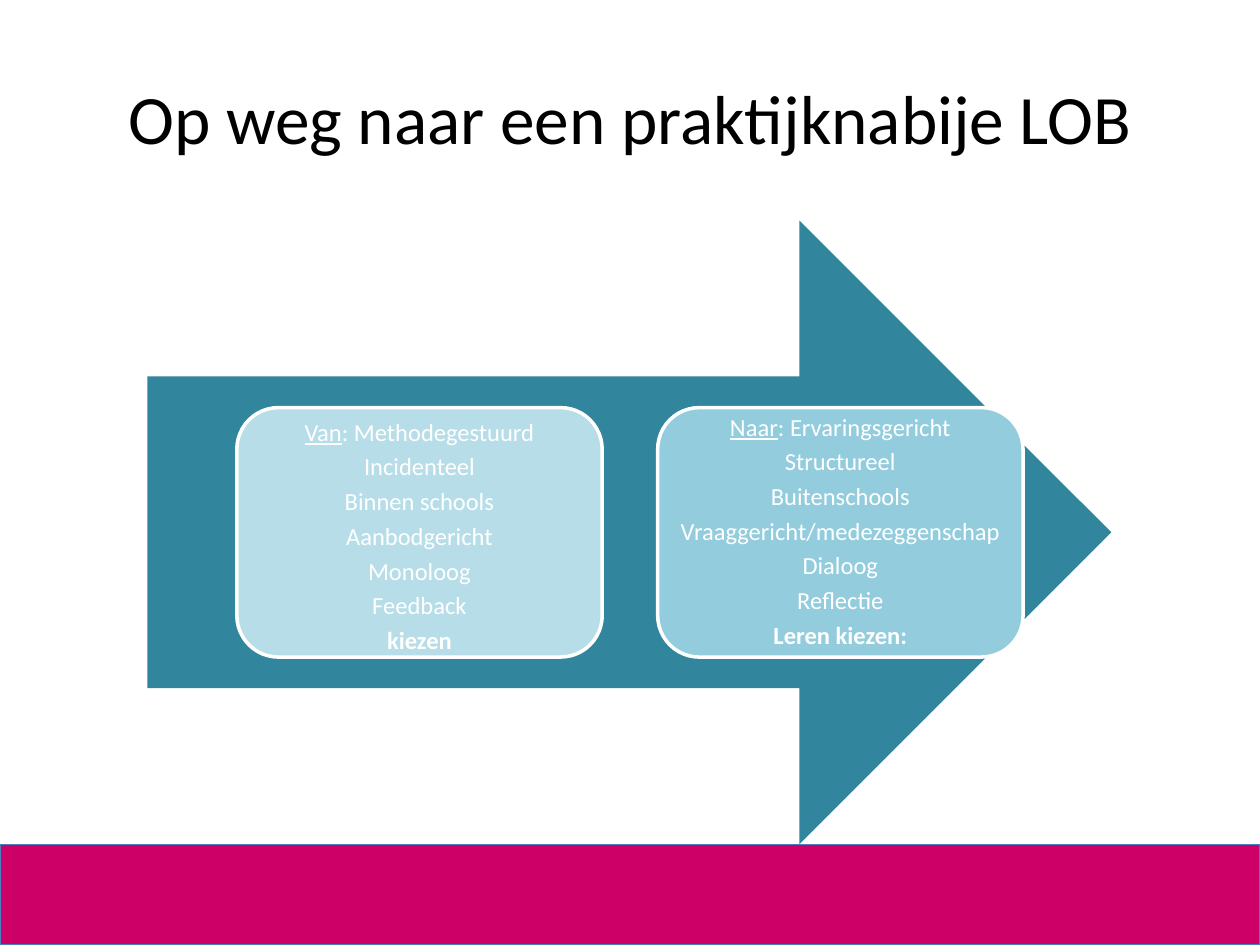
from pptx import Presentation
from pptx.dml.color import RGBColor
from pptx.enum.shapes import MSO_SHAPE as Shape
from pptx.enum.text import MSO_ANCHOR as Anchor, PP_ALIGN as Align
from pptx.util import Inches, Pt

# Content
TITLE = "Op weg naar een praktijknabije LOB"
CARDS = [
    {
        "label": "Van", "first": "Methodegestuurd", "fill": "from_card", "drop": 0.08,
        "middle": ["Incidenteel", "Binnen schools", "Aanbodgericht", "Monoloog", "Feedback"],
        "last": "kiezen",
    },
    {
        "label": "Naar", "first": "Ervaringsgericht", "fill": "to_card", "drop": 0,
        "middle": ["Structureel", "Buitenschools", "Vraaggericht/medezeggenschap",
                   "Dialoog", "Reflectie"],
        "last": "Leren kiezen:",
    },
]

THEME = {
    "font": "Calibri", "title_size": 39.6, "card_size": 14,
    "black": "000000", "white": "FFFFFF", "arrow": "31859C",
    "from_card": "B7DEE8", "to_card": "93CDDD",
    "band": "CC0066", "band_line": "4B7EBC",
}

# Layout in inches
SLIDE_WIDTH, SLIDE_HEIGHT = 10, 7.5
BAND_HEIGHT = 0.8
ARROW = (1.17, 1.75, 7.65, 4.95)
CARD_LEFT, CARD_WIDTH, CARD_HEIGHT, CARD_GAP = 1.88, 2.9, 1.98, 0.44
CARD_TOP = ARROW[1] + (ARROW[3] - CARD_HEIGHT) / 2
CARD_MARGIN = 0.06


def color(name):
    return RGBColor.from_string(THEME[name])


def add_block(slide, preset, box, fill, line=None, line_width=0):
    shape = slide.shapes.add_shape(preset, *map(Inches, box))
    shape.shadow.inherit = False
    shape.fill.solid()
    shape.fill.fore_color.rgb = color(fill)
    if line:
        shape.line.color.rgb = color(line)
        shape.line.width = Pt(line_width)
    else:
        shape.line.fill.background()
    return shape


def style_run(run, size, font_color):
    run.font.name = THEME["font"]
    run.font.size = Pt(THEME[size])
    run.font.color.rgb = color(font_color)


def add_title(slide):
    box = slide.shapes.add_textbox(*map(Inches, (0.5, 0.3, 9, 1.25)))
    frame = box.text_frame
    frame.word_wrap = True
    frame.vertical_anchor = Anchor.MIDDLE
    frame.text = TITLE
    paragraph = frame.paragraphs[0]
    paragraph.alignment = Align.CENTER
    style_run(paragraph.runs[0], "title_size", "black")


def add_card(slide, index, card):
    left = CARD_LEFT + index * (CARD_WIDTH + CARD_GAP)
    shape = add_block(slide, Shape.ROUNDED_RECTANGLE,
                      (left, CARD_TOP, CARD_WIDTH, CARD_HEIGHT), card["fill"], "white", 2)
    frame = shape.text_frame
    frame.word_wrap = True
    frame.vertical_anchor = Anchor.MIDDLE
    frame.margin_left = frame.margin_right = frame.margin_bottom = Inches(CARD_MARGIN)
    frame.margin_top = Inches(CARD_MARGIN + card["drop"])

    frame.text = "\n".join([card["label"], *card["middle"], card["last"]])
    paragraphs = frame.paragraphs
    paragraphs[0].add_run().text = ": " + card["first"]
    for paragraph in paragraphs:
        paragraph.alignment = Align.CENTER
        paragraph.line_spacing = 0.9
        paragraph.space_after = Pt(4.7)
        for run in paragraph.runs:
            style_run(run, "card_size", "white")
    paragraphs[0].runs[0].font.underline = True
    paragraphs[-1].runs[0].font.bold = True


def main():
    presentation = Presentation()
    presentation.slide_width = Inches(SLIDE_WIDTH)
    presentation.slide_height = Inches(SLIDE_HEIGHT)
    slide = presentation.slides.add_slide(presentation.slide_layouts[6])

    # Bottom band and title
    add_block(slide, Shape.RECTANGLE,
              (0, SLIDE_HEIGHT - BAND_HEIGHT, SLIDE_WIDTH, BAND_HEIGHT),
              "band", "band_line", 0.75)
    add_title(slide)

    # Arrow with the two cards on it
    add_block(slide, Shape.RIGHT_ARROW, ARROW, "arrow")
    for index, card in enumerate(CARDS):
        add_card(slide, index, card)

    presentation.save("out.pptx")


if __name__ == "__main__":
    main()
